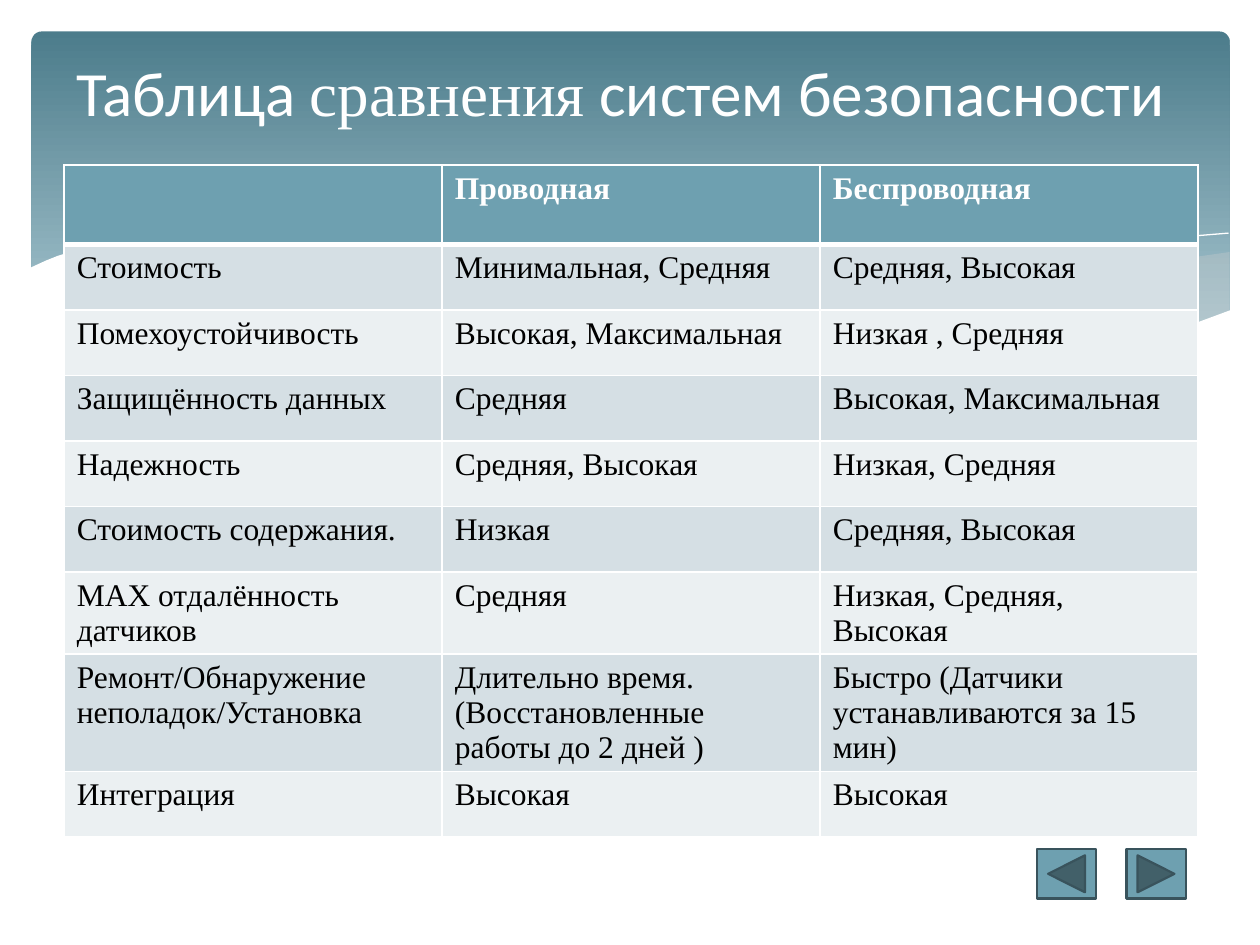
from lxml import etree
from pptx import Presentation
from pptx import util as u
from pptx.dml.color import RGBColor
from pptx.enum import shapes, text
from pptx.oxml import ns

Inches, Pt = u.Inches, u.Pt
COLORS = {
    "white": "FFFFFF", "black": "000000", "banner_top": "4C7C8B",
    "banner_bottom": "A8C6D0", "wave": "D4D2D0", "accent": "6EA0B0",
    "odd_row": "D5DFE4", "even_row": "EBF0F2", "outline": "39535C",
}
SERIF = "Times New Roman"

COMPARISON = [
    ("", "Проводная", "Беспроводная"),
    ("Стоимость", "Минимальная, Средняя", "Средняя, Высокая"),
    ("Помехоустойчивость", "Высокая, Максимальная", "Низкая , Средняя"),
    ("Защищённость данных", "Средняя", "Высокая, Максимальная"),
    ("Надежность", "Средняя, Высокая", "Низкая, Средняя"),
    ("Стоимость содержания.", "Низкая", "Средняя, Высокая"),
    ("МАХ отдалённость датчиков", "Средняя", "Низкая, Средняя, Высокая"),
    ("Ремонт/Обнаружение неполадок/Установка",
     "Длительно время. (Восстановленные работы до 2 дней )",
     "Быстро (Датчики устанавливаются за 15 мин)"),
    ("Интеграция", "Высокая", "Высокая"),
]

# Wave outlines, in inches
RIGHT_WAVE = [
    (9.76, 2), (9.48, 2.04), (9.21, 2.1), (8.61, 2.23), (8.05, 2.37),
    (7.53, 2.48), (7.06, 2.57), (6.61, 2.65), (7.05, 2.71), (7.45, 2.75),
    (7.81, 2.77), (8.14, 2.78), (8.54, 2.76), (8.89, 2.72), (9.21, 2.65),
    (9.49, 2.57), (9.76, 2.47),
]
LONG_WAVE = [
    (8.93, 2.73), (8.37, 2.65), (7.75, 2.54), (7.06, 2.4), (6.29, 2.22),
    (5.84, 2.11), (5.41, 2.03), (5.02, 1.96), (4.65, 1.91), (4.2, 1.87),
    (3.8, 1.85), (3.44, 1.86), (3.13, 1.88), (2.86, 1.91), (3.42, 1.99),
    (4.04, 2.11), (4.49, 2.22), (5.3, 2.4), (6.01, 2.55), (6.5, 2.64),
    (6.95, 2.7), (7.36, 2.75), (7.73, 2.77), (8.07, 2.78), (8.48, 2.77),
]
FALLING_LINE = [
    (3.09, 1.95), (3.44, 1.9), (3.87, 1.87), (4.33, 1.87), (4.89, 1.9),
    (5.56, 1.97), (6.36, 2.08), (6.95, 2.19), (7.6, 2.33), (8.31, 2.51),
    (9.07, 2.72),
]
RISING_LINE = [
    (6.13, 2.57), (6.53, 2.46), (6.95, 2.35), (7.48, 2.23), (8.06, 2.1),
    (8.66, 1.99), (9.1, 1.92), (9.51, 1.87), (9.75, 1.85),
]
WHITE_COVER = [
    (9.77, 2.46), (9.5, 2.56), (9.2, 2.65), (8.87, 2.71), (8.5, 2.75),
    (8.09, 2.77), (7.61, 2.75), (7.08, 2.7), (6.48, 2.62), (5.79, 2.5),
    (5.03, 2.33), (4.47, 2.2), (3.91, 2.07), (3.4, 1.97), (2.92, 1.9),
    (2.5, 1.86), (2.11, 1.84), (1.77, 1.84), (1.46, 1.85), (1.19, 1.87),
    (0.95, 1.91), (0.76, 1.95), (0.59, 1.99), (0.46, 2.03), (0.36, 2.07),
    (0.23, 2.13), (0.23, 3.29), (9.77, 3.29),
]


def rgb(name):
    return RGBColor.from_string(COLORS[name])


def add_text(paragraph, content, size=18, font=SERIF, color="black", bold=False):
    run = paragraph.add_run()
    run.text = content
    run.font.size, run.font.name, run.font.bold = Pt(size), font, bold
    run.font.color.rgb = rgb(color)


def paint(shape, fill=None, line=None, width=0, alpha=None):
    shape.shadow.inherit = False
    if fill:
        shape.fill.solid()
        shape.fill.fore_color.rgb = rgb(fill)
    else:
        shape.fill.background()
    if alpha is not None:
        srgb = shape._element.spPr.find(".//" + ns.qn("a:srgbClr"))
        etree.SubElement(srgb, ns.qn("a:alpha"), val=str(alpha * 1000))
    if line:
        shape.line.color.rgb = rgb(line)
        shape.line.width = Pt(width)
    else:
        shape.line.fill.background()


def add_outline(slide, points, closed=True, **look):
    corners = [(Inches(x), Inches(y)) for x, y in points]
    builder = slide.shapes.build_freeform(*corners[0])
    builder.add_line_segments(corners[1:], close=closed)
    paint(builder.convert_to_shape(), **look)


def add_banner(slide):
    banner = slide.shapes.add_shape(
        shapes.MSO_SHAPE.ROUNDED_RECTANGLE,
        Inches(0.25), Inches(0.25), Inches(9.51), Inches(2.7))
    banner.adjustments[0] = 0.03
    paint(banner)
    banner.fill.gradient()
    banner.fill.gradient_angle = 270
    stops = banner.fill.gradient_stops
    for stop, color, position in zip(stops, ("banner_top", "banner_bottom"), (0, 0.9)):
        stop.color.rgb = rgb(color)
        stop.position = position

    add_outline(slide, RIGHT_WAVE, fill="wave", alpha=29)
    add_outline(slide, LONG_WAVE, fill="wave", alpha=40)
    for curve in (FALLING_LINE, RISING_LINE):
        add_outline(slide, curve, closed=False, line="white")
    add_outline(slide, WHITE_COVER, fill="white")


def add_title(slide):
    title = slide.shapes.add_textbox(Inches(0.35), Inches(0.3), Inches(9.15), Inches(0.85))
    frame = title.text_frame
    frame.word_wrap = True
    frame.vertical_anchor = text.MSO_ANCHOR.MIDDLE
    heading = frame.paragraphs[0]
    heading.alignment = text.PP_ALIGN.CENTER
    for words, font in (("Таблица ", "Calibri"), ("сравнения", SERIF),
                        (" систем безопасности", "Calibri")):
        add_text(heading, words, size=36, font=font, color="white")


def add_borders(cell, bottom):
    properties = cell._tc.get_or_add_tcPr()
    for side, width in (("L", 1), ("R", 1), ("T", 1), ("B", bottom)):
        border = etree.SubElement(properties, ns.qn("a:ln" + side), w=str(Pt(width)))
        fill = etree.SubElement(border, ns.qn("a:solidFill"))
        etree.SubElement(fill, ns.qn("a:srgbClr"), val=COLORS["white"])


def add_comparison(slide):
    table = slide.shapes.add_table(
        len(COMPARISON), 3, Inches(0.51), Inches(1.31), Inches(9), Inches(4.79)).table
    for r, row in enumerate(COMPARISON):
        header = r == 0
        table.rows[r].height = Inches(0.63 if header else 0.52)
        fill = "accent" if header else "odd_row" if r % 2 else "even_row"
        for c, words in enumerate(row):
            cell = table.cell(r, c)
            # Borders come before the fill in the cell properties
            add_borders(cell, bottom=3 if header else 1)
            cell.fill.solid()
            cell.fill.fore_color.rgb = rgb(fill)
            if words:
                add_text(cell.text_frame.paragraphs[0], words,
                         color="white" if header else "black", bold=header)


def add_navigation(slide):
    preset = shapes.MSO_SHAPE
    for kind, left in ((preset.ACTION_BUTTON_FORWARD_OR_NEXT, 8.94),
                       (preset.ACTION_BUTTON_BACK_OR_PREVIOUS, 8.23)):
        button = slide.shapes.add_shape(
            kind, Inches(left), Inches(6.74), Inches(0.47), Inches(0.39))
        paint(button, fill="accent", line="outline", width=1.25)


def main():
    deck = Presentation()
    deck.slide_width, deck.slide_height = Inches(10), Inches(7.5)
    slide = deck.slides.add_slide(deck.slide_layouts[6])
    add_banner(slide)
    add_comparison(slide)
    add_title(slide)
    add_navigation(slide)
    deck.save("out.pptx")


if __name__ == "__main__":
    main()
